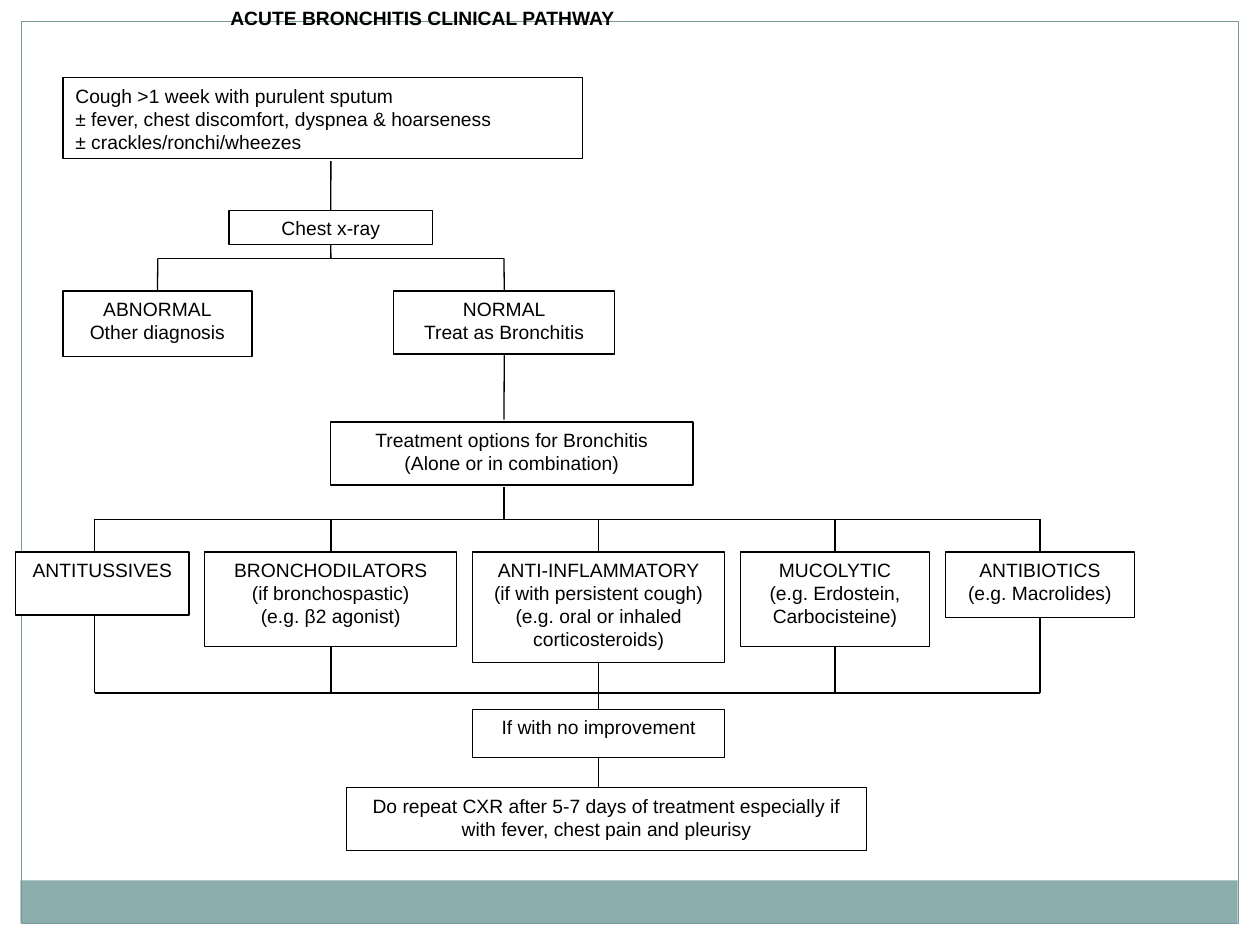
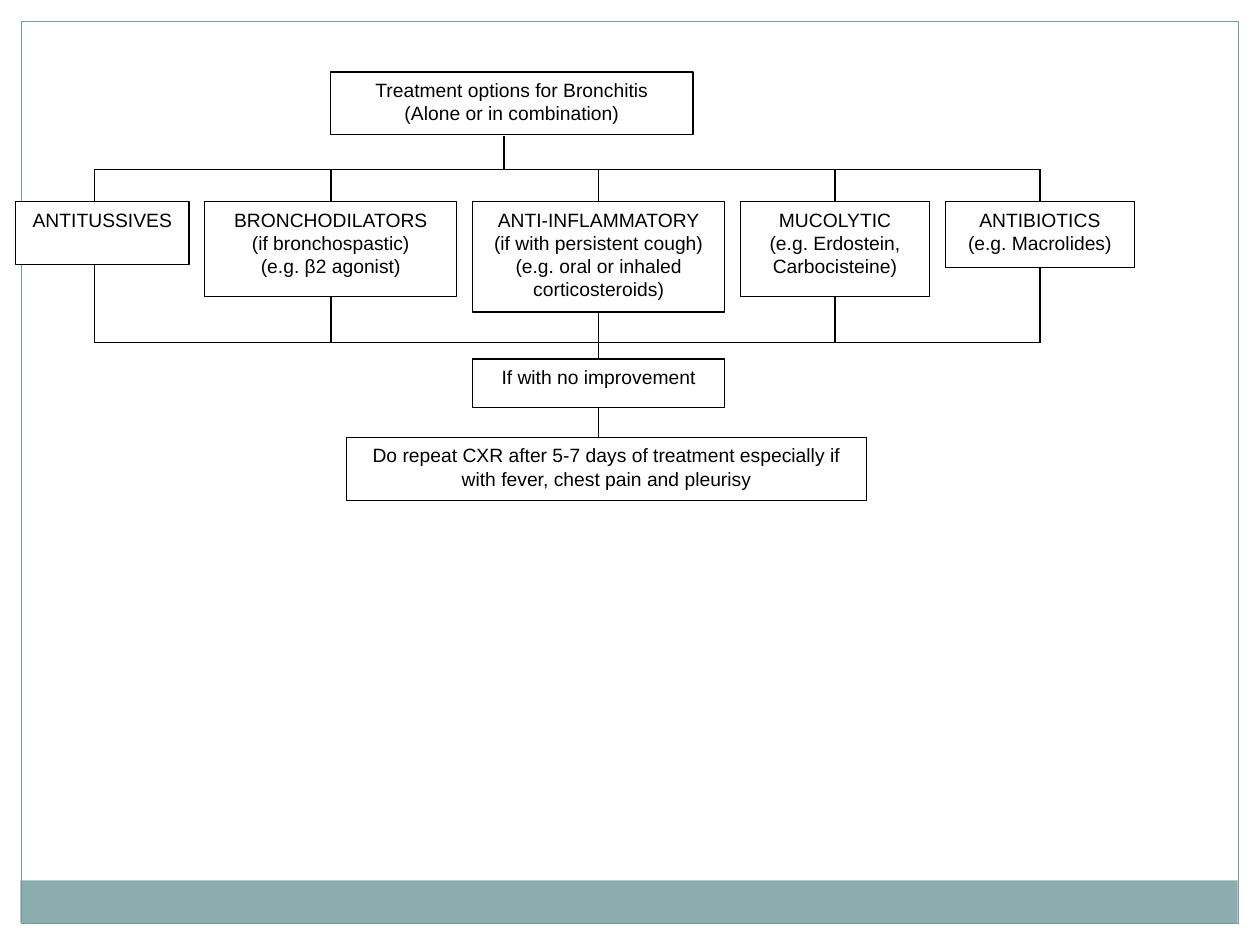
from lxml import etree
from pptx import Presentation
from pptx.dml.color import RGBColor
from pptx.enum import shapes, text
from pptx.oxml.ns import qn
from pptx.util import Cm, Pt

HUES = {"ink": "000000", "paper": "FFFFFF", "band": "8CADAE", "edge": "7C999A"}
FONT, SIZE, RULE = "Arial", Pt(11), Pt(0.75)
MID = text.PP_ALIGN.CENTER

# Treatments: width, height, text lines
DRUGS = [
    (3.49, 1.27, ["ANTITUSSIVES"]),
    (5.08, 1.91, ["BRONCHODILATORS", "(if bronchospastic)", "(e.g. β2 agonist)"]),
    (5.08, 2.22, ["ANTI-INFLAMMATORY", "(if with persistent cough)",
                  "(e.g. oral or inhaled corticosteroids)"]),
    (3.81, 1.91, ["MUCOLYTIC", "(e.g. Erdostein, Carbocisteine)"]),
    (3.81, 1.32, ["ANTIBIOTICS", "(e.g. Macrolides)"]),
]
GAP = 0.32


def hue(name):
    return RGBColor.from_string(HUES[name])


def write(frame, lines, align=MID, bold=False):
    for i, line in enumerate(lines):
        para = frame.add_paragraph() if i else frame.paragraphs[0]
        para.alignment = align
        run = para.add_run()
        run.text = line
        run.font.name, run.font.size, run.font.bold = FONT, SIZE, bold
        run.font.color.rgb = hue("ink")


def rect(slide, x, y, w, h, fill=None, edge=None):
    shape = slide.shapes.add_shape(
        shapes.MSO_SHAPE.RECTANGLE, Cm(x), Cm(y), Cm(w), Cm(h))
    shape.shadow.inherit = False
    if fill:
        shape.fill.solid()
        shape.fill.fore_color.rgb = hue(fill)
    else:
        shape.fill.background()
    if edge:
        shape.line.color.rgb = hue(edge)
        shape.line.width = RULE
    else:
        shape.line.fill.background()
    return shape


def node(slide, x, y, w, h, lines, align=MID):
    shape = rect(slide, x, y, w, h, "paper", "ink")
    shape.text_frame.word_wrap = True
    shape.text_frame.vertical_anchor = text.MSO_ANCHOR.TOP
    write(shape.text_frame, lines, align)
    return shape


def wire(slide, x1, y1, x2, y2, above=None, below=None):
    """Draw a line, joined to the box above or below where one is given."""
    line = slide.shapes.add_connector(
        shapes.MSO_CONNECTOR.STRAIGHT, Cm(x1), Cm(y1), Cm(x2), Cm(y2))
    line.line.color.rgb = hue("ink")
    line.line.width = RULE
    etree.SubElement(line._element.spPr, qn("a:effectLst"))
    if above is not None:
        line.begin_connect(above, 2)
    if below is not None:
        line.end_connect(below, 0)


def base(deck):
    """Start a slide with the shared band and border."""
    slide = deck.slides.add_slide(deck.slide_layouts[6])
    rect(slide, 0.41, 17.75, 24.54, 0.86, fill="band")
    rect(slide, 0.43, 0.43, 24.54, 18.19, edge="edge")
    return slide


def title(slide, x, y, w, h, words):
    box = slide.shapes.add_textbox(Cm(x), Cm(y), Cm(w), Cm(h))
    box.text_frame.word_wrap = True
    box.text_frame.vertical_anchor = text.MSO_ANCHOR.MIDDLE
    write(box.text_frame, [words], bold=True)


def workup(slide, x, y):
    """Symptoms, chest x-ray and its two results."""
    node(slide, x, y, 10.48, 1.63,
         ["Cough >1 week with purulent sputum",
          "± fever, chest discomfort, dyspnea & hoarseness",
          "± crackles/ronchi/wheezes"], text.PP_ALIGN.JUSTIFY)
    xray = node(slide, x + 3.35, y + 2.67, 4.1, 0.69, ["Chest x-ray"])
    ill = node(slide, x, y + 4.3, 3.81, 1.32, ["ABNORMAL", "Other diagnosis"])
    well = node(slide, x + 6.67, y + 4.3, 4.45, 1.27,
                ["NORMAL", "Treat as Bronchitis"])
    # Lines
    mid, left, right, fork = x + 5.4, x + 1.91, x + 8.89, y + 3.64
    wire(slide, mid, y + 1.68, mid, y + 2.67, below=xray)
    wire(slide, mid, y + 3.36, mid, fork, above=xray)
    wire(slide, left, fork, right, fork)
    wire(slide, left, fork, left, y + 4.3, below=ill)
    wire(slide, right, fork, right, y + 4.3, below=well)
    wire(slide, right, y + 5.57, right, y + 6.89, above=well)


def options(slide, x, y):
    """Treatment options, fanned out and gathered again."""
    node(slide, x + 6.35, y, 7.3, 1.27,
         ["Treatment options for Bronchitis", "(Alone or in combination)"])
    fan, row, join, last = y + 1.96, y + 2.62, y + 5.46, y + 7.37
    wire(slide, x + 9.84, y + 1.3, x + 9.84, fan)
    retry = node(slide, x + 9.21, y + 5.79, 5.08, 0.97,
                 ["If with no improvement"])
    node(slide, x + 6.67, last, 10.48, 1.27,
         ["Do repeat CXR after 5-7 days of treatment especially if "
          "with fever, chest pain and pleurisy"])
    # Treatments, each with a line in and a line out
    left, stems = x, []
    for i, (w, h, lines) in enumerate(DRUGS):
        drug = node(slide, left, row, w, h, lines)
        stem = left + w / 2 if i else x + 1.59
        tie = drug if i else None  # the first stem is off centre
        wire(slide, stem, fan, stem, row, below=tie)
        if i == 2:
            wire(slide, stem, row + h, stem, y + 5.79, drug, retry)
        else:
            wire(slide, stem, row + h, stem, join, above=tie)
        stems.append(stem)
        left += w + GAP
    for level in (fan, join):
        wire(slide, stems[0], level, stems[-1], level)
    wire(slide, stems[2], y + 6.76, stems[2], last, above=retry)


def main():
    deck = Presentation()
    deck.slide_width, deck.slide_height = Cm(25.4), Cm(19.05)

    # Full pathway
    slide = base(deck)
    workup(slide, 1.27, 1.57)
    options(slide, 0.32, 8.51)
    title(slide, 0, 0, 17.04, 0.74, "ACUTE BRONCHITIS CLINICAL PATHWAY")

    # Treatment only
    options(base(deck), 0.32, 1.45)

    deck.save("out.pptx")


if __name__ == "__main__":
    main()
